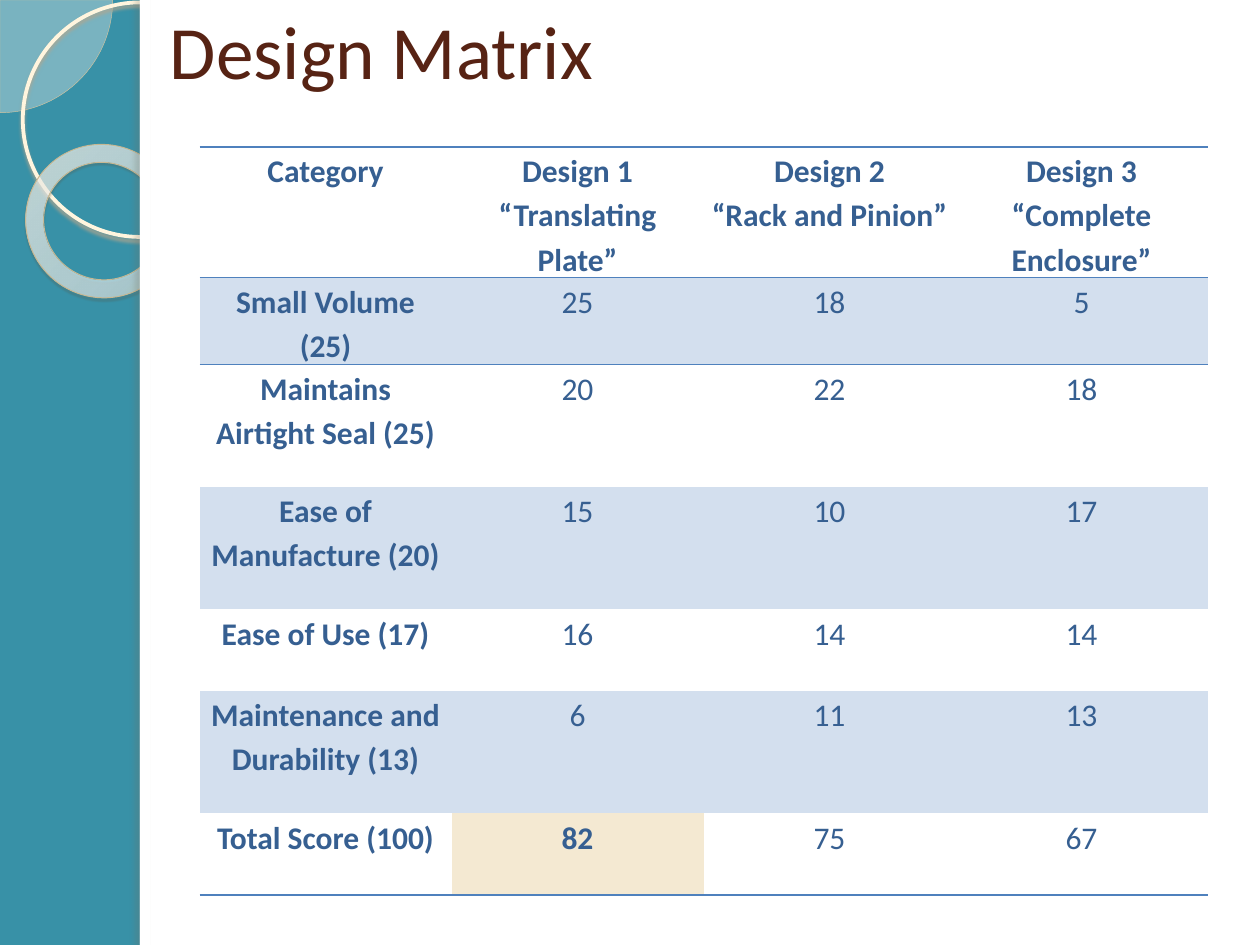
from lxml import etree
from pptx import Presentation
from pptx.dml.color import RGBColor
from pptx.enum import shapes as kinds, text as styles
from pptx.oxml import ns, parse_xml
from pptx.util import Pt

TEAL = RGBColor(0x38, 0x91, 0xA7)
WHITE = RGBColor(0xFF, 0xFF, 0xFF)
CREAM = RGBColor(0xFE, 0xFA, 0xF4)
SAND = RGBColor(0xD3, 0xC3, 0x9F)
IVORY = RGBColor(0xFF, 0xF5, 0xDE)
KHAKI = RGBColor(0xC7, 0xB8, 0x93)
BROWN = RGBColor(0x57, 0x23, 0x14)
NAVY = RGBColor(0x36, 0x5F, 0x91)
RULE = RGBColor(0x4F, 0x81, 0xBD)
BAND = RGBColor(0xD3, 0xDF, 0xEE)
WINNER = RGBColor(0xF4, 0xE9, 0xD2)
RING_STOPS = [(0, "FFFCF6", 70), (70, "FFFEFB", 55), (100, "F0D28E", 60)]

FONT = "Calibri"
NO_TABLE_STYLE = "{2D5ABB26-0587-4C30-8999-92F81FD0307C}"
HEADER = ["Category", "Design 1 “Translating Plate”",
          "Design 2\n“Rack and Pinion”", "Design 3\n“Complete Enclosure”"]
SCORES = [
    ["Small Volume (25)", 25, 18, 5],
    ["Maintains Airtight Seal (25)", 20, 22, 18],
    ["Ease of Manufacture (20)", 15, 10, 17],
    ["Ease of Use (17)", 16, 14, 14],
    ["Maintenance and Durability (13)", 6, 11, 13],
    ["Total Score (100)", 82, 75, 67],
]
ROW_HEIGHTS = [70, 46.6, 70, 70, 46.6, 70, 46.6]


def set_all(target, values):
    for name, value in values.items():
        setattr(target, name, value)


def add_colour(parent, colour, opacity):
    node = etree.SubElement(parent, ns.qn("a:srgbClr"), val=str(colour))
    etree.SubElement(node, ns.qn("a:alpha"), val=str(opacity * 1000))


def add_figure(page, kind, box, fill=None, line=None, width=0, shadow=None):
    """shadow is (colour, opacity %, blur, distance, angle)."""
    figure = page.shapes.add_shape(kind, *map(Pt, box))
    figure.shadow.inherit = False
    if fill is None:
        figure.fill.background()
    else:
        figure.fill.solid()
        figure.fill.fore_color.rgb = fill
    if line is None:
        figure.line.fill.background()
    else:
        figure.line.color.rgb = line
        figure.line.width = Pt(width)
    if shadow:
        colour, opacity, blur, distance, angle = shadow
        effects = figure._element.spPr.find(ns.qn("a:effectLst"))
        outer = etree.SubElement(
            effects, ns.qn("a:outerShdw"), blurRad=str(Pt(blur)),
            dist=str(Pt(distance)), dir=str(angle * 60000), rotWithShape="0")
        add_colour(outer, colour, opacity)
    return figure


def fill_with_glow(figure):
    """Swap the solid fill for an off-centre, translucent radial gradient."""
    gradient = parse_xml(
        f'<a:gradFill {ns.nsdecls("a")}><a:gsLst/><a:path path="circle">'
        '<a:fillToRect l="-408000" t="-50000" r="508000" b="150000"/>'
        '</a:path></a:gradFill>')
    for position, colour, opacity in RING_STOPS:
        stop = etree.SubElement(gradient[0], ns.qn("a:gs"), pos=str(position * 1000))
        add_colour(stop, colour, opacity)
    properties = figure._element.spPr
    properties.replace(properties.find(ns.qn("a:solidFill")), gradient)


def add_side_art(page, left, top):
    shape = kinds.MSO_SHAPE
    radius = 64.4
    quarter = add_figure(page, shape.PIE,
                         (left - radius, top - radius, 2 * radius, 2 * radius),
                         CREAM, SAND, 0.25)
    quarter.adjustments[0] = 0
    quarter.adjustments[1] = 54
    colour = quarter._element.spPr.find(ns.qn("a:solidFill"))[0]
    etree.SubElement(colour, ns.qn("a:alpha"), val="33000")

    add_figure(page, shape.OVAL, (left + 13, top + 1.4, 134, 134),
               line=IVORY, width=2.15, shadow=("B0A68F", 85, 2, 2, 90))
    ring = add_figure(page, shape.DONUT, (left + 14.4, top + 82.8, 88.6, 87.1),
                      CREAM, KHAKI, 0.58, ("5A5444", 35, 1, 1.2, 75))
    ring.adjustments[0] = 0.118
    ring.rotation = 38.6
    fill_with_glow(ring)


def add_panel(page, left, top, width, height):
    rectangle = kinds.MSO_SHAPE.RECTANGLE
    add_figure(page, rectangle, (left, top, width, height), WHITE)
    add_figure(page, rectangle, (left, top, 5.76, height), WHITE,
               shadow=("736F63", 25, 3, 3, 180))


def add_title(page, left, top, width, height):
    frame = page.shapes.add_textbox(*map(Pt, (left, top, width, height))).text_frame
    set_all(frame, {"word_wrap": True, "vertical_anchor": styles.MSO_ANCHOR.MIDDLE})
    span = frame.paragraphs[0].add_run()
    span.text = "Design Matrix"
    set_all(span.font, {"size": Pt(43), "name": FONT})
    span.font.color.rgb = BROWN


def add_rule(cell, side):
    edge = etree.SubElement(cell._tc.get_or_add_tcPr(), ns.qn("a:ln" + side),
                            w=str(Pt(1)))
    solid = etree.SubElement(edge, ns.qn("a:solidFill"))
    add_colour(solid, RULE, 100)


def fill_cell(cell, content, bold, colour):
    set_all(cell, {"margin_left": Pt(4.5), "margin_right": Pt(4.5),
                   "margin_top": 0, "margin_bottom": 0})
    cell.text_frame.text = str(content)
    for para in cell.text_frame.paragraphs:
        set_all(para, {"alignment": styles.PP_ALIGN.CENTER, "line_spacing": 1.15})
        for span in para.runs:
            set_all(span.font, {"size": Pt(18), "name": FONT, "bold": bold})
            span.font.color.rgb = NAVY
    if colour is None:
        cell.fill.background()
    else:
        cell.fill.solid()
        cell.fill.fore_color.rgb = colour


def add_matrix(page, left, top, width, height):
    rows = [HEADER] + SCORES
    last = len(rows) - 1
    frame = page.shapes.add_table(len(rows), len(HEADER),
                                  *map(Pt, (left, top, width, height)))
    table = frame.table
    set_all(table, {"first_row": False, "horz_banding": False})
    table._tbl.tblPr.find(ns.qn("a:tableStyleId")).text = NO_TABLE_STYLE
    for column in table.columns:
        column.width = Pt(width / len(HEADER))
    for r, values in enumerate(rows):
        table.rows[r].height = Pt(ROW_HEIGHTS[r])
        for c, content in enumerate(values):
            cell = table.cell(r, c)
            if r in (0, 1):
                add_rule(cell, "T")
            if r in (0, last):
                add_rule(cell, "B")
            winner = (r, c) == (last, 1)
            colour = WINNER if winner else BAND if r % 2 else None
            fill_cell(cell, content, r == 0 or c == 0 or winner, colour)


def main():
    deck = Presentation()
    set_all(deck, {"slide_width": Pt(720), "slide_height": Pt(540)})
    page = deck.slides.add_slide(deck.slide_layouts[6])
    page.background.fill.solid()
    page.background.fill.fore_color.rgb = TEAL
    add_side_art(page, 0, 0)
    add_panel(page, 80, 0, 640, 540)
    add_title(page, 90, -30, 612, 116)
    add_matrix(page, 114, 84, 576, sum(ROW_HEIGHTS))
    deck.save("out.pptx")


if __name__ == "__main__":
    main()
